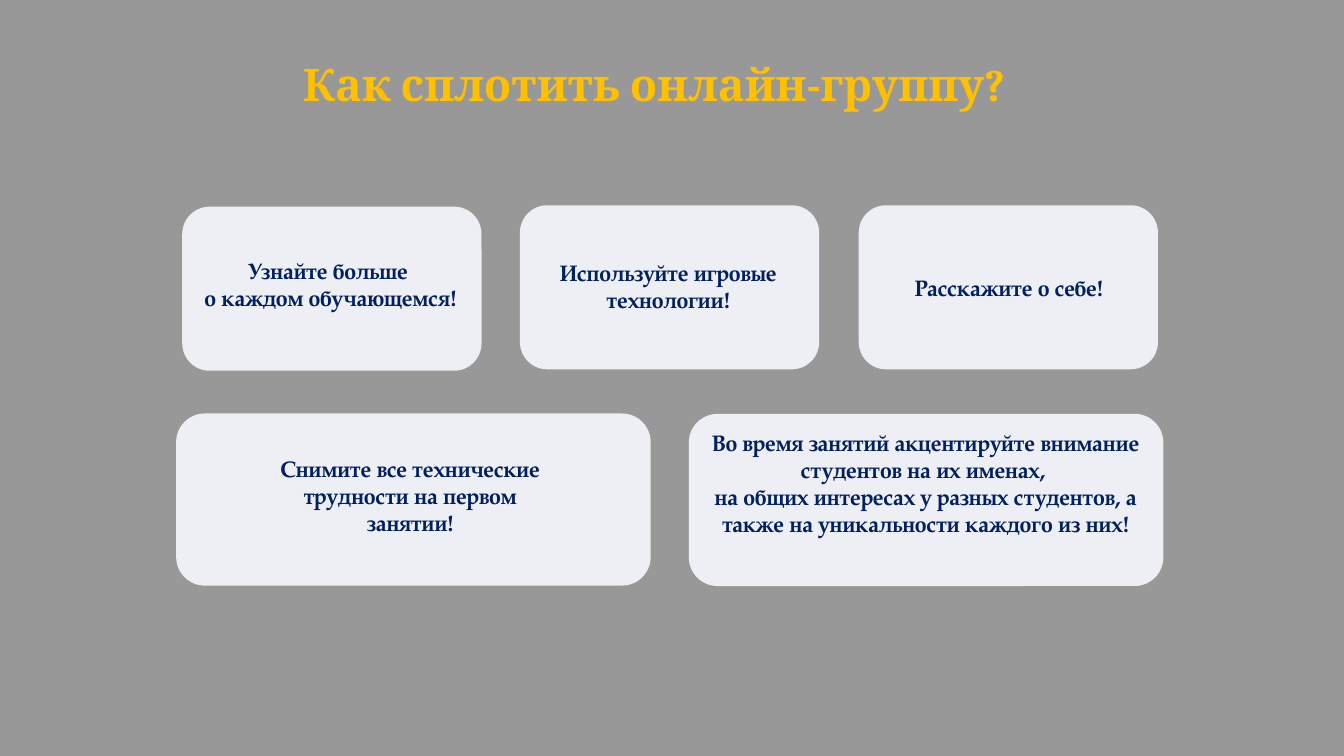
from pptx import Presentation
from pptx.dml.color import RGBColor
from pptx.enum.shapes import MSO_SHAPE as SHAPE
from pptx.enum.text import MSO_ANCHOR as ANCHOR, MSO_AUTO_SIZE as AUTO, PP_ALIGN as ALIGN
from pptx.util import Pt


def rgb(value):
    return RGBColor.from_string(value)


def write(sp, text, font="TeX Gyre Pagella", size=16, color="002060", inset=(7.2, 3.6)):
    tf = sp.text_frame
    tf.word_wrap = True
    tf.auto_size = AUTO.NONE
    tf.vertical_anchor = ANCHOR.TOP
    tf.margin_left = tf.margin_right = Pt(inset[0])
    tf.margin_top = tf.margin_bottom = Pt(inset[1])
    p = tf.paragraphs[0]
    p.alignment = ALIGN.CENTER
    p.text = text
    for r in p.runs:
        r.font.name = font
        r.font.size = Pt(size)
        r.font.bold = True
        r.font.color.rgb = rgb(color)


prs = Presentation()
prs.slide_width, prs.slide_height = Pt(960), Pt(540)
s = prs.slides.add_slide(prs.slide_layouts[5])
s.background.fill.solid()
s.background.fill.fore_color.rgb = rgb("989898")

title = s.shapes.title
title.left, title.top, title.width, title.height = Pt(88.5), Pt(36.7), Pt(757.4), Pt(46)
write(title, "Как сплотить онлайн-группу?", font="Cambria", size=32,
      color="FFC000", inset=(3.6, 3.6))

small, large = (213.8, 117.2), (339, 123)
cards = [
    (130.2, 147.6, small, (123.8, 180, 224.6, 46),
     "Узнайте больше \vо каждом обучающемся!"),
    (371.4, 146.6, small, (375.1, 181.4, 204.5, 46),
     "Используйте игровые технологии!"),
    (613.4, 146.6, small, (618.5, 192.2, 204.5, 26.6),
     "Расскажите о себе!"),
    (125.8, 295.3, large, (190.8, 321.8, 204.5, 65.5),
     "Снимите все технические трудности на первом занятии!"),
    (492, 295.6, large, (499.7, 303.1, 323.3, 104.4),
     "Во время занятий акцентируйте внимание студентов на их именах, \v"
     "на общих интересах у разных студентов, а также на уникальности каждого из них!"),
]
for left, top, (width, height), text_box, text in cards:
    card = s.shapes.add_shape(SHAPE.ROUNDED_RECTANGLE, Pt(left), Pt(top), Pt(width), Pt(height))
    card.shadow.inherit = False
    card.fill.solid()
    card.fill.fore_color.rgb = rgb("EEEFF4")
    card.line.fill.background()
    write(s.shapes.add_textbox(*(Pt(v) for v in text_box)), text)

prs.save("out.pptx")
